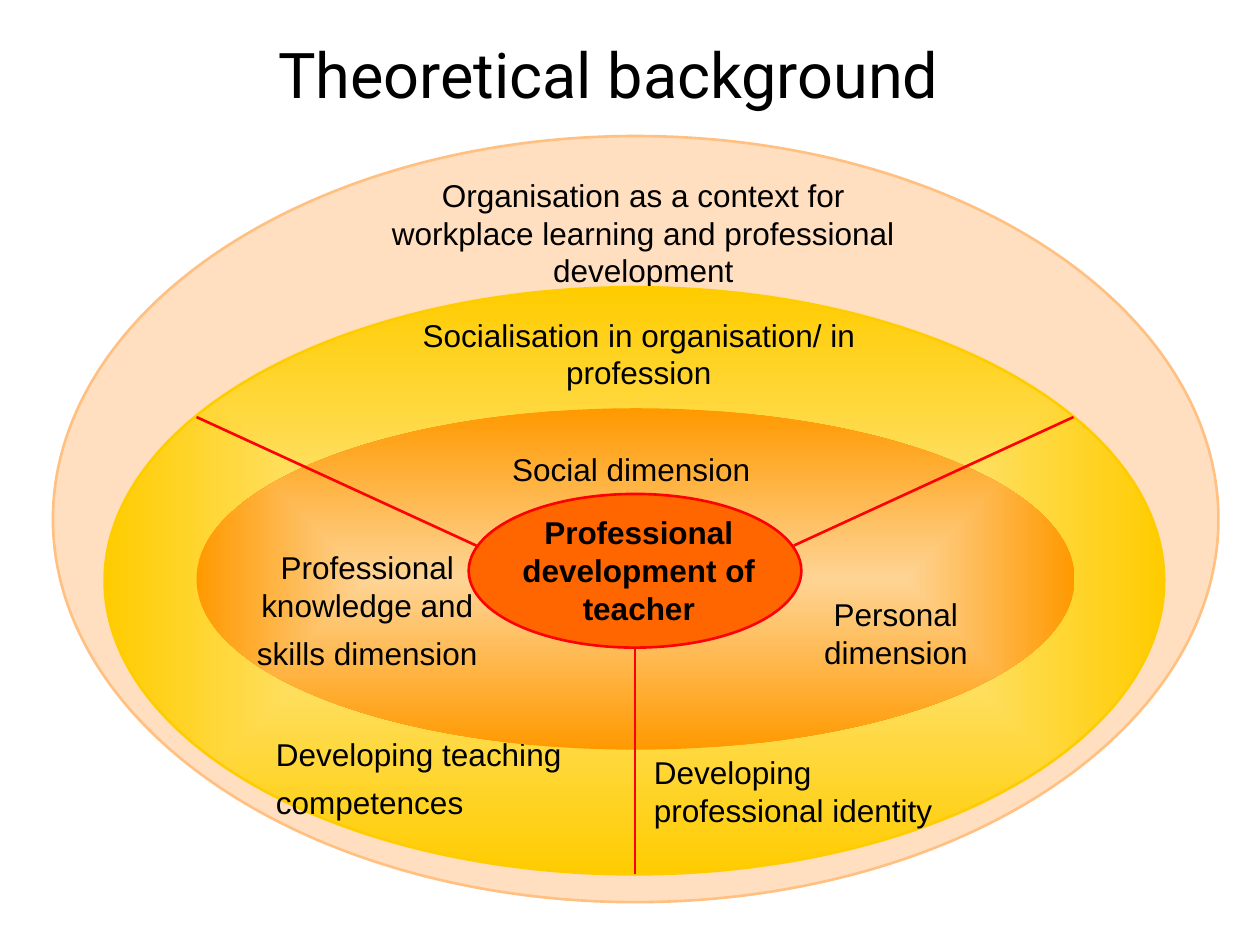
from lxml import etree
from pptx import Presentation
from pptx.dml.color import RGBColor
from pptx.enum.shapes import MSO_CONNECTOR, MSO_SHAPE
from pptx.enum.text import MSO_ANCHOR, PP_ALIGN
from pptx.oxml import parse_xml
from pptx.oxml.ns import nsdecls, qn
from pptx.util import Inches, Pt

COLORS = {
    "text": "000000", "context": "FFC081", "red": "FF0000", "core": "FF6600",
    "yellow": "FFCC00", "pale_yellow": "FEE995",
    "orange": "FF9900", "pale_orange": "FED495",
}
LEFT, CENTER = PP_ALIGN.LEFT, PP_ALIGN.CENTER

# Rings: left, top, width, height
CONTEXT = (0.42, 1.08, 9.25, 6.08)
SOCIALISATION = (0.83, 2.28, 8.41, 4.66)
DIMENSIONS = (1.56, 3.24, 6.97, 2.71)
CORE = (3.72, 3.92, 2.64, 1.22)

# Labels: box, paragraphs, format
TITLE = ((0.33, 0.25, 9, 0.67), ["Theoretical background"],
         dict(size=36, font="Roboto"))
CONTEXT_LABELS = [
    ((3.06, 1.44, 4.09, 0.81),
     ["Organisation as a context for workplace learning and professional development"], {}),
]
SOCIALISATION_LABELS = [
    ((2.17, 5.87, 2.68, 0.61), ["Developing teaching", "competences"],
     dict(align=LEFT, after=6)),
    ((3.24, 2.5, 3.66, 0.61), ["Socialisation in organisation/ in profession"], dict(after=6)),
    ((5.17, 6.03, 2.63, 0.5), ["Developing professional identity"],
     dict(align=LEFT, after=6)),
]
DIMENSION_LABELS = [
    ((1.75, 4.45, 2.33, 0.78), ["Professional knowledge and", "skills dimension"],
     dict(after=6)),
    ((6.35, 4.73, 1.52, 0.58), ["Personal dimension"], {}),
]
CORE_LABELS = [
    ((3.78, 3.52, 2.46, 0.4), ["Social dimension"], {}),
    ((3.96, 4.12, 2.22, 0.81), ["Professional development of teacher"], dict(bold=True)),
]
# Dividers between the three sectors: x1, y1, x2, y2
DIVIDERS = [(1.56, 3.31, 3.78, 4.33), (6.3, 4.33, 8.52, 3.31), (5.04, 5.14, 5.04, 6.94)]


def rgb(name):
    return RGBColor.from_string(COLORS[name])


def add_text(slide, box, paragraphs, size=18, font="Arial", bold=False,
             align=CENTER, after=0):
    tf = slide.shapes.add_textbox(*map(Inches, box)).text_frame
    tf.word_wrap = True
    tf.vertical_anchor = MSO_ANCHOR.MIDDLE
    tf.margin_left = tf.margin_right = Inches(0.02)
    tf.margin_top = tf.margin_bottom = Inches(0.01)
    for i, text in enumerate(paragraphs):
        p = tf.paragraphs[0] if i == 0 else tf.add_paragraph()
        p.alignment = align
        p.space_after = Pt(after)
        r = p.add_run()
        r.text = text
        r.font.size, r.font.name, r.font.bold = Pt(size), font, bold
        r.font.color.rgb = rgb("text")


def add_labels(slide, labels):
    for box, paragraphs, style in labels:
        add_text(slide, box, paragraphs, **style)


def add_ellipse(slide, box, fill, line=None, opacity=None, center=None):
    """Draw a ring; center is the inner colour of a gradient towards fill."""
    s = slide.shapes.add_shape(MSO_SHAPE.OVAL, *map(Inches, box))
    s.shadow.inherit = False
    s.fill.solid()
    s.fill.fore_color.rgb = rgb(fill)
    solid = s._element.spPr.find(qn("a:solidFill"))
    if opacity is not None:
        etree.SubElement(solid[0], qn("a:alpha"), val=str(opacity * 1000))
    if center:
        solid.getparent().replace(solid, parse_xml(
            f'<a:gradFill {nsdecls("a")} rotWithShape="1"><a:gsLst>'
            f'<a:gs pos="0"><a:srgbClr val="{COLORS[center]}"/></a:gs>'
            f'<a:gs pos="100000"><a:srgbClr val="{COLORS[fill]}"/></a:gs></a:gsLst>'
            '<a:path path="shape"><a:fillToRect l="50000" t="50000" r="50000" b="50000"/>'
            '</a:path></a:gradFill>'))
    if line:
        s.line.color.rgb = rgb(line)
        s.line.width = Pt(1.5)
    else:
        s.line.fill.background()


def add_divider(slide, ends):
    c = slide.shapes.add_connector(MSO_CONNECTOR.STRAIGHT, *map(Inches, ends))
    c.line.color.rgb = rgb("red")
    c.line.width = Pt(1.5)
    etree.SubElement(c._element.spPr, qn("a:effectLst"))


def main():
    prs = Presentation()
    prs.slide_width, prs.slide_height = Inches(10), Inches(7.5)
    slide = prs.slides.add_slide(prs.slide_layouts[6])

    add_labels(slide, [TITLE])
    add_ellipse(slide, CONTEXT, "context", line="context", opacity=50)
    add_labels(slide, CONTEXT_LABELS)
    add_ellipse(slide, SOCIALISATION, "yellow", line="yellow", center="pale_yellow")
    add_labels(slide, SOCIALISATION_LABELS)
    add_ellipse(slide, DIMENSIONS, "orange", center="pale_orange")
    add_labels(slide, DIMENSION_LABELS)
    add_ellipse(slide, CORE, "core", line="red")
    for ends in DIVIDERS:
        add_divider(slide, ends)
    add_labels(slide, CORE_LABELS)

    prs.save("out.pptx")


if __name__ == "__main__":
    main()
